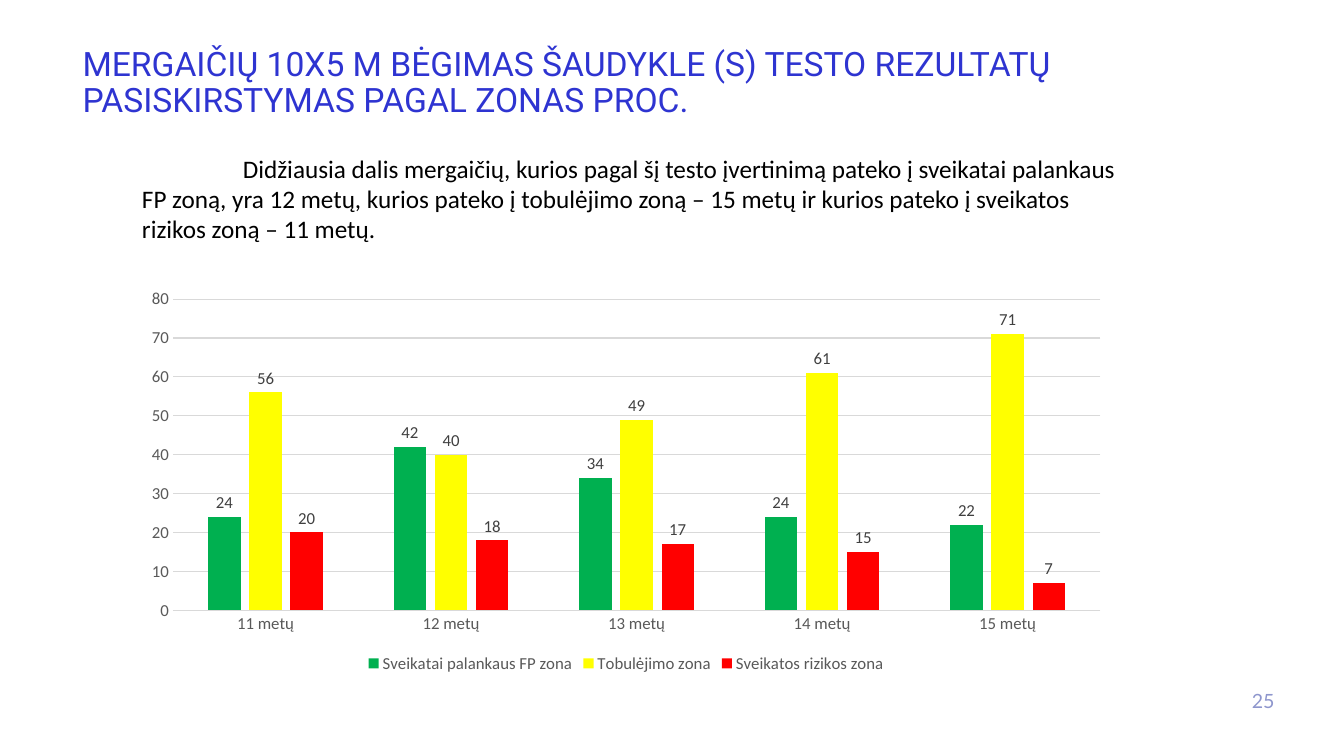
import pptx
import pptx.chart.data
import pptx.dml.color
import pptx.enum.chart
import pptx.enum.text
import pptx.util

EMU_PER_PX = 9144  # 100 px to the inch

COLORS = {
    "title": "2E34D1",
    "number": "8E96CD",
    "body": "000000",
    "axis": "595959",
    "label": "404040",
    "grid": "D9D9D9",
}
AGES = ["11 metų", "12 metų", "13 metų", "14 metų", "15 metų"]
ZONES = [
    ("Sveikatai palankaus FP zona", "00B050", (24, 42, 34, 24, 22)),
    ("Tobulėjimo zona", "FFFF00", (56, 40, 49, 61, 71)),
    ("Sveikatos rizikos zona", "FF0000", (20, 18, 17, 15, 7)),
]


def px(length):
    return pptx.util.Emu(length * EMU_PER_PX)


def rgb(value):
    return pptx.dml.color.RGBColor.from_string(value)


def set_font(font, name, size, color):
    font.name = name
    font.size = pptx.util.Pt(size)
    font.color.rgb = rgb(color)


def add_text(slide, box, text, *, font, size, color, align="LEFT",
             line_spacing=1.0, first_indent=0):
    shape = slide.shapes.add_textbox(*map(px, box))
    frame = shape.text_frame
    frame.word_wrap = True
    frame.vertical_anchor = pptx.enum.text.MSO_ANCHOR.TOP
    paragraph = frame.paragraphs[0]
    paragraph.alignment = pptx.enum.text.PP_ALIGN[align]
    paragraph.line_spacing = line_spacing
    if first_indent:
        properties = paragraph._p.get_or_add_pPr()
        properties.set("marL", "0")
        properties.set("indent", str(px(first_indent)))
    run = paragraph.add_run()
    run.text = text
    set_font(run.font, font, size, color)
    return shape


def style_axis(axis):
    axis.major_tick_mark = pptx.enum.chart.XL_TICK_MARK.NONE
    axis.minor_tick_mark = pptx.enum.chart.XL_TICK_MARK.NONE
    set_font(axis.tick_labels.font, "Calibri", 12, COLORS["axis"])


def style_line(line):
    line.color.rgb = rgb(COLORS["grid"])
    line.width = pptx.util.Pt(0.75)


def add_zone_chart(slide, box):
    data = pptx.chart.data.CategoryChartData()
    data.categories = AGES
    for name, _, values in ZONES:
        data.add_series(name, values)
    chart = slide.shapes.add_chart(
        pptx.enum.chart.XL_CHART_TYPE.COLUMN_CLUSTERED, *map(px, box), data
    ).chart
    set_font(chart.font, "Calibri", 10, COLORS["body"])
    chart.has_title = False

    # Axes and gridlines
    style_axis(chart.category_axis)
    style_line(chart.category_axis.format.line)
    value_axis = chart.value_axis
    style_axis(value_axis)
    value_axis.minimum_scale = 0
    value_axis.maximum_scale = 80
    value_axis.major_unit = 10
    value_axis.format.line.fill.background()
    value_axis.has_major_gridlines = True
    style_line(value_axis.major_gridlines.format.line)

    # Legend
    chart.has_legend = True
    chart.legend.position = pptx.enum.chart.XL_LEGEND_POSITION.BOTTOM
    chart.legend.include_in_layout = False
    set_font(chart.legend.font, "Calibri", 12, COLORS["axis"])

    # Columns with value labels
    plot = chart.plots[0]
    plot.gap_width = 219
    plot.overlap = -27
    plot.vary_by_categories = False
    for series, (_, color, _) in zip(plot.series, ZONES):
        series.format.fill.solid()
        series.format.fill.fore_color.rgb = rgb(color)
        series.invert_if_negative = False
        labels = series.data_labels
        labels.show_value = True
        labels.position = pptx.enum.chart.XL_LABEL_POSITION.OUTSIDE_END
        set_font(labels.font, "Calibri", 12, COLORS["label"])


def build_results_slide(slide, box):
    left, top, width, height = box

    # Title
    add_text(slide, (left + 72, top + 42, 1141, 138),
             "MERGAIČIŲ 10X5 M BĖGIMAS ŠAUDYKLE (S) TESTO REZULTATŲ "
             "PASISKIRSTYMAS PAGAL ZONAS PROC.",
             font="Roboto", size=24, color=COLORS["title"], line_spacing=0.9)

    # Summary and chart share a left edge
    content_left = left + 131
    add_text(slide, (content_left, top + 147, 1005, 101),
             "Didžiausia dalis mergaičių, kurios pagal šį testo įvertinimą "
             "pateko į sveikatai palankaus FP zoną, yra 12 metų, kurios pateko "
             "į tobulėjimo zoną – 15 metų ir kurios pateko į sveikatos rizikos "
             "zoną – 11 metų.",
             font="Calibri", size=18, color=COLORS["body"], first_indent=100)
    add_zone_chart(slide, (content_left, top + 279, 980, 393))

    # Slide number
    add_text(slide, (left + width - 111, top + height - 71, 52, 40), "25",
             font="Lato", size=14, color=COLORS["number"], align="RIGHT")


def main():
    presentation = pptx.Presentation()
    presentation.slide_width = px(1333)
    presentation.slide_height = px(750)
    slide = presentation.slides.add_slide(presentation.slide_layouts[6])
    build_results_slide(slide, (0, 0, 1333, 750))
    presentation.save("out.pptx")


if __name__ == "__main__":
    main()
